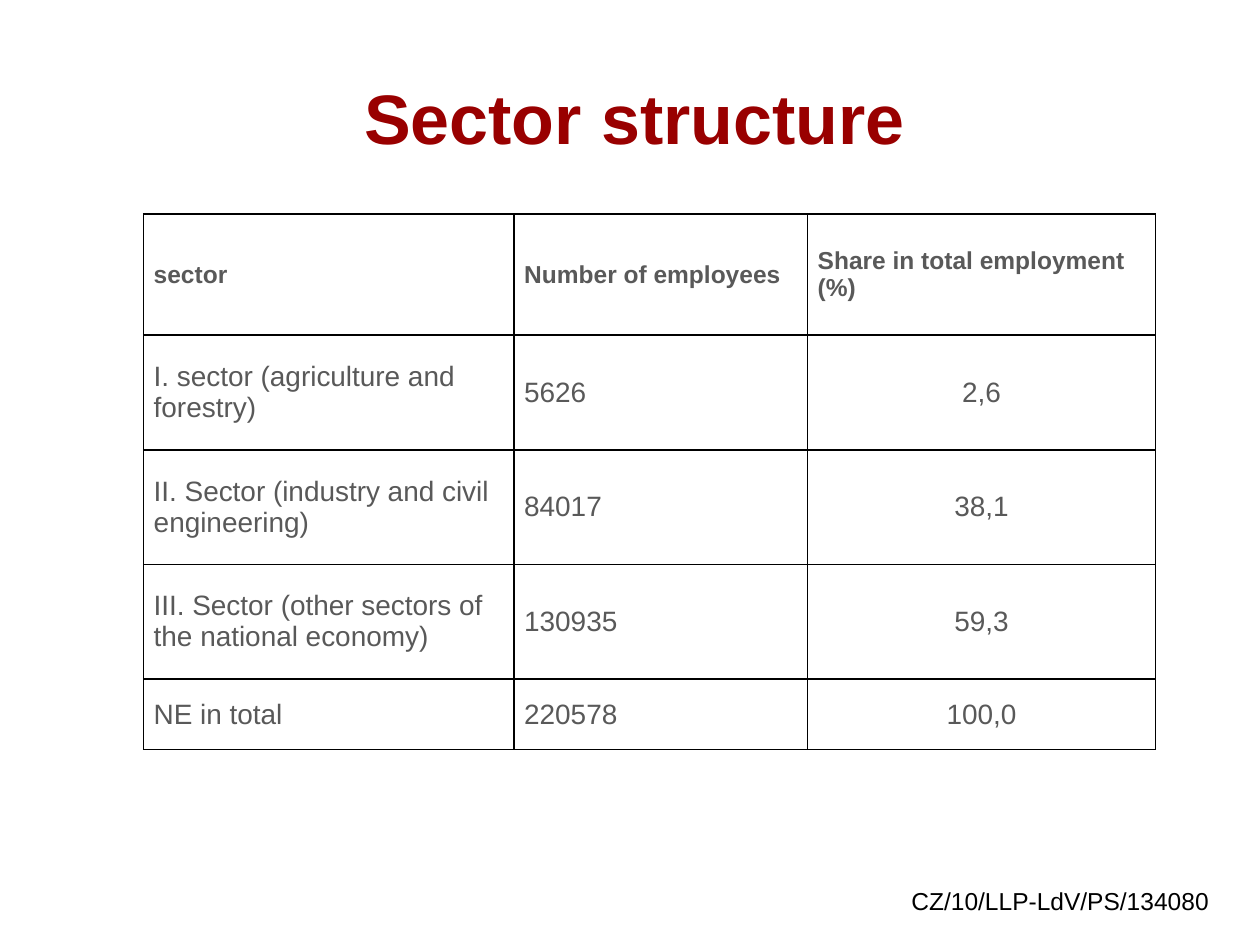
import dataclasses

import lxml.etree
import pptx
import pptx.dml.color
import pptx.enum.text
import pptx.oxml.ns
import pptx.util

Inches = pptx.util.Inches
Align = pptx.enum.text.PP_ALIGN
Anchor = pptx.enum.text.MSO_ANCHOR


@dataclasses.dataclass(frozen=True)
class Theme:
    font: str = "Arial"
    title_color: str = "990000"
    table_color: str = "595959"
    black: str = "000000"
    white: str = "FFFFFF"
    title_size: int = 40
    body_size: int = 16
    small_size: int = 14
    border_width: int = 1


class SlideBuilder:
    """Holds the theme and the current slide, and adds styled elements to it."""

    def __init__(self, slide, theme):
        self.slide = slide
        self.theme = theme

    def set_text(self, text_frame, text, size, color, bold=False, align=Align.LEFT):
        text_frame.word_wrap = True
        text_frame.text = text
        paragraph = text_frame.paragraphs[0]
        paragraph.alignment = align
        font = paragraph.font
        font.name = self.theme.font
        font.size = pptx.util.Pt(size)
        font.bold = bold
        font.color.rgb = pptx.dml.color.RGBColor.from_string(color)

    def title(self, text, left, top, width, height):
        shape = self.slide.shapes.title
        shape.left, shape.top = Inches(left), Inches(top)
        shape.width, shape.height = Inches(width), Inches(height)
        shape.text_frame.vertical_anchor = Anchor.MIDDLE
        self.set_text(shape.text_frame, text, self.theme.title_size,
                      self.theme.title_color, bold=True)

    def text(self, text, left, top, width, height):
        shape = self.slide.shapes.add_textbox(
            Inches(left), Inches(top), Inches(width), Inches(height))
        self.set_text(shape.text_frame, text, self.theme.small_size,
                      self.theme.black, align=Align.CENTER)

    def border(self, cell):
        properties = cell._tc.get_or_add_tcPr()
        qn = pptx.oxml.ns.qn
        for side in ("a:lnL", "a:lnR", "a:lnT", "a:lnB"):
            line = lxml.etree.SubElement(properties, qn(side))
            line.set("w", str(pptx.util.Pt(self.theme.border_width)))
            fill = lxml.etree.SubElement(line, qn("a:solidFill"))
            lxml.etree.SubElement(fill, qn("a:srgbClr")).set("val", self.theme.black)

    def cell(self, cell, text, header, align):
        self.border(cell)
        cell.fill.solid()
        cell.fill.fore_color.rgb = pptx.dml.color.RGBColor.from_string(self.theme.white)
        cell.vertical_anchor = Anchor.MIDDLE
        cell.margin_left = cell.margin_right = Inches(0.08)
        cell.margin_top = cell.margin_bottom = Inches(0.04)
        size = self.theme.small_size if header else self.theme.body_size
        self.set_text(cell.text_frame, text, size, self.theme.table_color, header, align)

    def table(self, rows, left, top, widths, heights):
        table = self.slide.shapes.add_table(
            len(rows), len(widths), Inches(left), Inches(top),
            Inches(sum(widths)), Inches(sum(heights))).table
        table.horz_banding = False
        for column, width in zip(table.columns, widths):
            column.width = Inches(width)
        for row, height in zip(table.rows, heights):
            row.height = Inches(height)
        for i, row in enumerate(rows):
            for j, text in enumerate(row):
                centered = i > 0 and j == len(widths) - 1
                self.cell(table.cell(i, j), text, header=i == 0,
                          align=Align.CENTER if centered else Align.LEFT)


SECTORS = [
    ("sector", "Number of employees", "Share in total employment (%)"),
    ("I. sector (agriculture and forestry)", "5626", "2,6"),
    ("II. Sector (industry and civil engineering)", "84017", "38,1"),
    ("III. Sector (other sectors of the national economy)", "130935", "59,3"),
    ("NE in total", "220578", "100,0"),
]


def main():
    presentation = pptx.Presentation()
    presentation.slide_width, presentation.slide_height = Inches(10), Inches(7.5)
    slide = presentation.slides.add_slide(presentation.slide_layouts[5])
    builder = SlideBuilder(slide, Theme())
    builder.title("Sector structure", 2.79, 0.3, 6.71, 1.25)
    builder.text("CZ/10/LLP-LdV/PS/134080", 6.83, 6.98, 3.17, 0.52)
    builder.table(SECTORS, 1.14, 1.7, widths=[2.94, 2.33, 2.76],
                  heights=[0.96, 0.91, 0.91, 0.91, 0.56])
    presentation.save("out.pptx")


if __name__ == "__main__":
    main()
